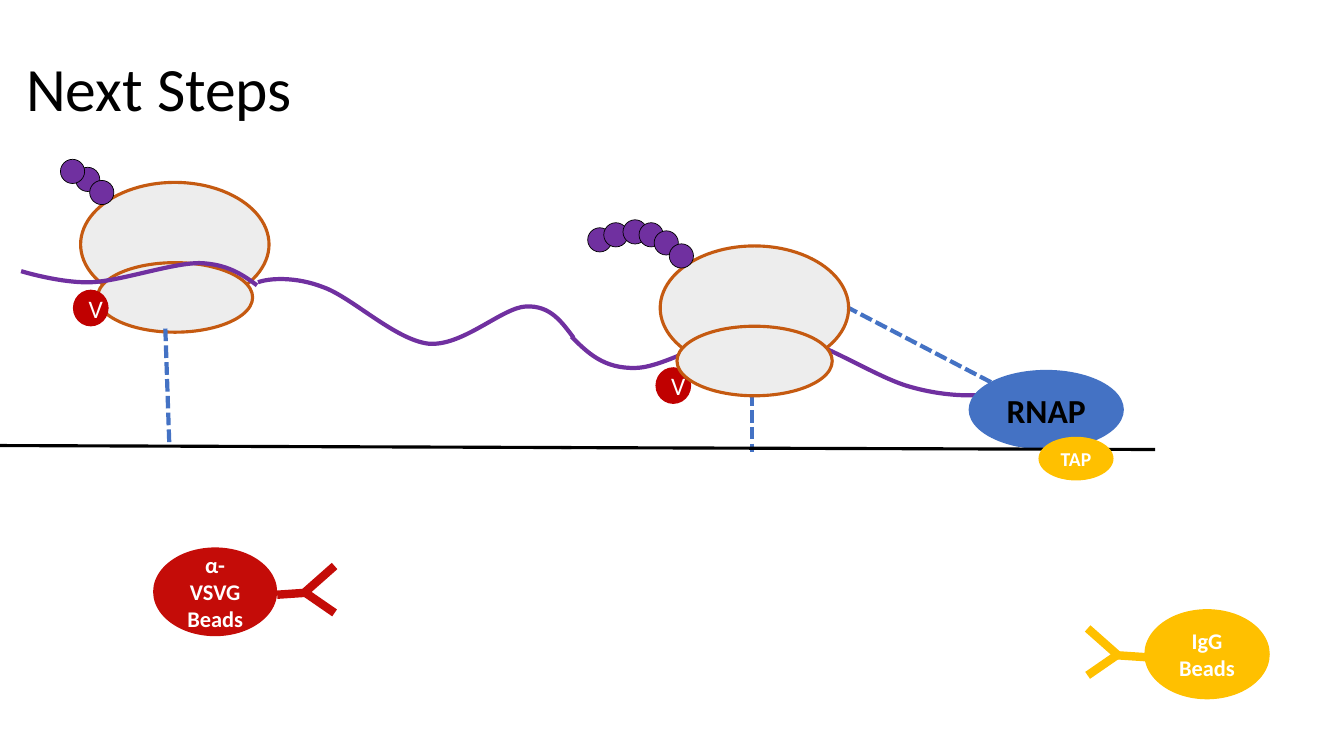
from lxml import etree
from pptx import Presentation
from pptx.dml.color import RGBColor
from pptx.enum import dml, shapes, text
from pptx.oxml import ns
from pptx.util import Pt

# Content: all lengths in points
TITLE = "Next Steps"
PURPLE, BLUE, GOLD, RED, GREY = "7030A0", "4472C4", "FFC000", "C00000", "EDEDED"
BROWN, BEAD_RED, BLACK, WHITE = "C55A11", "C40C08", "000000", "FFFFFF"

LARGE_SUBUNIT, SMALL_SUBUNIT = (134.6, 88.6), (110.9, 49.7)
SMALL_OFFSET = (12, 57.3)
RESIDUE, V_TAG, ANTIBODY_BEAD = (17.3, 17.3), (24.5, 25.2), (88.6, 63.4)

LEFT_RIBOSOME = {"at": (57.6, 130.3),
                 "peptide": [(54, 119.5), (43.2, 113.8), (64.1, 128.9)]}
RIGHT_RIBOSOME = {"at": (471.6, 175.7),
                  "peptide": [(419.8, 162.7), (431.3, 159.1), (445, 157),
                              (456.5, 159.1), (467.3, 164.9), (478.1, 174.2)]}
LEFT_V, RIGHT_V = (52.6, 207.4), (468.7, 262.8)

# Each strand: a start point, then two handles and an end point per curve
RNA_RIGHT = [(408.2, 240.5), (419.8, 252), (431.3, 263.5), (454.3, 262.8),
             (478.1, 262.1), (516.2, 234), (548.6, 236.2),
             (581.8, 239), (623.5, 269.3), (650.9, 276.5),
             (679, 284.4), (704.2, 283), (714.2, 280.1)]
RNA_MIDDLE = [(409.7, 241.2), (401, 229.7), (393.1, 218.2), (375.8, 218.9),
              (358.6, 219.6), (330.5, 247.7), (306, 245.5),
              (282.2, 242.6), (251.3, 212.4), (231.1, 205.2),
              (211, 197.3), (192.2, 198.7), (184.3, 201.6)]
RNA_LEFT = [(183.6, 203.8), (172.8, 195.8), (162, 188.6), (142.6, 187.9),
            (122.4, 187.9), (85.7, 200.9), (64.8, 201.6),
            (43.2, 202.3), (15.1, 193.7), (15.1, 193.7)]

# Bead text, position, fill, outline, side of the antibody (1 right, -1 left)
ANTIBODIES = [("α-VSVG Beads", (109.4, 391), BEAD_RED, None, 1),
              ("IgG Beads", (817.9, 435.6), GOLD, GOLD, -1)]
# Antibody strokes, measured outwards from the bead's edge and down from its top
ANTIBODY_STROKES = [((41, 13.3), (19.4, 32.4)),
                    ((41, 46.8), (19.4, 31.9)),
                    ((20.9, 32.4), (0, 33.8))]

presentation = Presentation()
presentation.slide_width, presentation.slide_height = Pt(960), Pt(540)
slide = presentation.slides.add_slide(presentation.slide_layouts[5])


def color(hex_string):
    return RGBColor.from_string(hex_string)


def add_ellipse(parent, at, size, fill, line=None, width=1, label="", size_pt=18,
                label_color=WHITE, bold=True):
    shape = parent.shapes.add_shape(shapes.MSO_SHAPE.OVAL,
                                    *[Pt(value) for value in (*at, *size)])
    shape.shadow.inherit = False
    shape.fill.solid()
    shape.fill.fore_color.rgb = color(fill)
    if line:
        shape.line.color.rgb = color(line)
        shape.line.width = Pt(width)
    else:
        shape.line.fill.background()
    if label:
        frame = shape.text_frame
        frame.word_wrap = True
        frame.vertical_anchor = text.MSO_ANCHOR.MIDDLE
        paragraph = frame.paragraphs[0]
        paragraph.text = label
        paragraph.alignment = text.PP_ALIGN.CENTER
        font = paragraph.font
        font.name, font.size, font.bold = "Calibri", Pt(size_pt), bold
        font.color.rgb = color(label_color)


def add_line(parent, start, end, line, width, dashed=False):
    connector = parent.shapes.add_connector(
        shapes.MSO_CONNECTOR.STRAIGHT, *[Pt(value) for value in (*start, *end)])
    connector.line.color.rgb = color(line)
    connector.line.width = Pt(width)
    if dashed:
        connector.line.dash_style = dml.MSO_LINE.SQUARE_DOT
    etree.SubElement(connector._element.spPr, ns.qn("a:effectLst"))


def add_strand(parent, points):
    """Draw a freeform through the end points, then bend its segments."""
    corners = [(Pt(x), Pt(y)) for x, y in points]
    builder = parent.shapes.build_freeform(*corners[0])
    builder.add_line_segments(corners[3::3], close=False)
    strand = builder.convert_to_shape()
    strand.shadow.inherit = False
    strand.fill.background()
    strand.line.color.rgb = color(PURPLE)
    strand.line.width = Pt(3)
    segments = list(strand._element.iter(ns.qn("a:lnTo")))
    for index, segment in enumerate(segments):
        segment.tag = ns.qn("a:cubicBezTo")
        segment.clear()
        for x, y in corners[3 * index + 1:3 * index + 4]:
            etree.SubElement(segment, ns.qn("a:pt"),
                             x=str(x - strand.left), y=str(y - strand.top))


def add_ribosome(parent, at, peptide):
    small_at = (at[0] + SMALL_OFFSET[0], at[1] + SMALL_OFFSET[1])
    add_ellipse(parent, at, LARGE_SUBUNIT, GREY, BROWN, 2.25)
    add_ellipse(parent, small_at, SMALL_SUBUNIT, GREY, BROWN, 2.25)
    for residue_at in peptide:
        add_ellipse(parent, residue_at, RESIDUE, PURPLE, BLACK, 0.5)


def add_v_tag(parent, at):
    add_ellipse(parent, at, V_TAG, RED, RED, label="V", bold=False)


# Title
title = slide.shapes.title
title.left, title.top, title.width, title.height = Pt(11.5), Pt(0), Pt(848.2), Pt(130.3)
title.text_frame.vertical_anchor = text.MSO_ANCHOR.MIDDLE
heading = title.text_frame.paragraphs[0]
heading.text = TITLE
heading.alignment = text.PP_ALIGN.LEFT
heading.line_spacing = 0.9
heading.font.name, heading.font.size = "Calibri", Pt(44)
heading.font.color.rgb = color(BLACK)

# Antibody beads
for label, (left, top), fill, outline, side in ANTIBODIES:
    antibody = slide.shapes.add_group_shape()
    edge = left + ANTIBODY_BEAD[0] if side > 0 else left
    for stroke in ANTIBODY_STROKES:
        start, end = [(edge + side * out, top + down) for out, down in stroke]
        add_line(antibody, start, end, fill, 6)
    add_ellipse(antibody, (left, top), ANTIBODY_BEAD, fill, outline,
                label=label, size_pt=16)

# Right ribosome on its strand, with crosslinks
add_strand(slide, RNA_RIGHT)
add_line(slide, (537.1, 280.8), (537.1, 322.6), BLUE, 3, dashed=True)
add_line(slide, (604.1, 218.9), (707.8, 273), BLUE, 3, dashed=True)
right_group = slide.shapes.add_group_shape()
add_v_tag(right_group, RIGHT_V)
add_ribosome(right_group, **RIGHT_RIBOSOME)

# Polymerase on the DNA
add_ellipse(slide, (691.9, 264.2), (110.9, 56.9), BLUE, label="RNAP", size_pt=24,
            label_color=BLACK)
add_line(slide, (401, 319.7), (825.1, 321.1), BLACK, 2.25)
add_ellipse(slide, (742.3, 312.5), (52.6, 30.2), GOLD, GOLD, label="TAP", size_pt=14)

# Left ribosome on its strand, with crosslink and DNA
left_group = slide.shapes.add_group_shape()
add_ribosome(left_group, **LEFT_RIBOSOME)
add_strand(left_group, RNA_MIDDLE)
add_v_tag(left_group, LEFT_V)
add_strand(left_group, RNA_LEFT)
add_line(left_group, (118.1, 234.7), (121, 319), BLUE, 3, dashed=True)
add_line(left_group, (-15.8, 318.2), (408.2, 319.7), BLACK, 2.25)

presentation.save("out.pptx")
